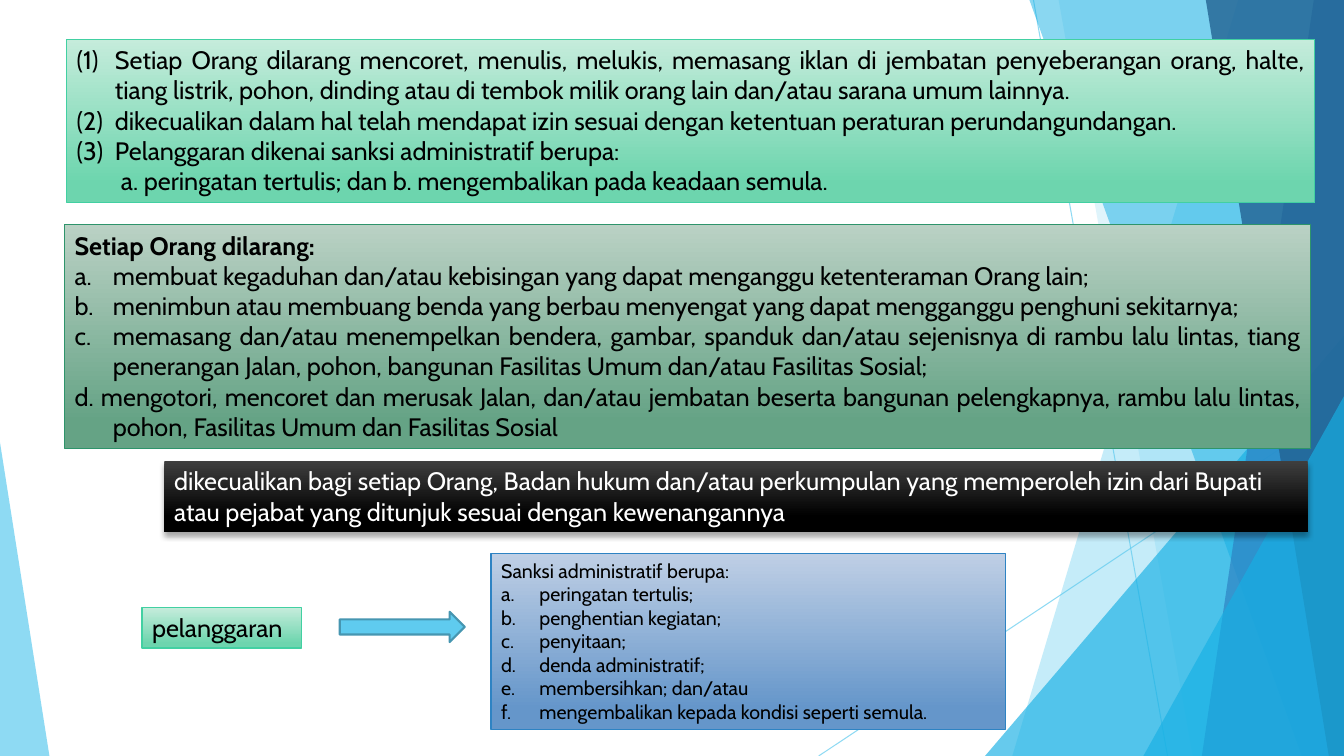
import pptx
import pptx.dml.color
import pptx.enum.shapes
import pptx.enum.text
import pptx.oxml
import pptx.oxml.ns
import pptx.util
import lxml.etree

WIDTH, HEIGHT = 13.33, 7.5
FONT = "Cabin"
HANG = 0.38
PARENTHESES, LETTERS = "arabicParenBoth", "alphaLcPeriod"
SHAPES = pptx.enum.shapes.MSO_SHAPE

# Background: start and end points
RAYS = [((10.25, 0), (11.58, HEIGHT)), ((WIDTH, 4.03), (8.12, HEIGHT))]
# Bands reach the right edge: top x, bottom x, colour, opacity in percent
BANDS_BACK = [(12.28, 10.04, "5FCBEF", 36), (10.5, 11.83, "5FCBEF", 20)]
BANDS_FRONT = [(10.21, 12.91, "17B0E4", 50), (13.03, 11.92, "2E83C3", 70),
               (11.96, 13.18, "226292", 80)]
# Triangles stand on the bottom edge: left, top, width, apex, colour, opacity
TRIANGLE_BACK = (9.77, 3.33, 3.56, 1, "17B0E4", 66)
TRIANGLES_FRONT = [(11.34, 3.93, 1.99, 1, "17B0E4", 66),
                   (0, 4.39, 0.49, 0, "5FCBEF", 70)]

# Gradients: first colour, last colour, where the last begins, line colour
MINT = ("C5ECDB", "6DD5AE", 88, "42D0A2")
GREEN = ("BAD1C4", "65A385", 88, "2E946B")
BLUE = ("BFCFE5", "6596CA", 88, "2E83C3")
BLACK = ("3F3F3F", "000000", 78, None)

# Lists: placeholder index, box, gradient, text format, paragraphs
# (text, paragraph format)
NUMBERED = {"bullet": PARENTHESES, "left": HANG, "first": -HANG}
LETTERED = {"bullet": LETTERS, "left": HANG, "first": -HANG}
LISTS = [
    (1, (0.66, 0.39, 12.38, 1.62), MINT, {"size": 18, "justify": True}, [
        ("Setiap Orang dilarang mencoret, menulis, melukis, memasang iklan di jembatan "
         "penyeberangan orang, halte, tiang listrik, pohon, dinding atau di tembok milik "
         "orang lain dan/atau sarana umum lainnya.", NUMBERED),
        ("dikecualikan dalam hal telah mendapat izin sesuai dengan ketentuan peraturan "
         "perundangundangan.", NUMBERED),
        ("Pelanggaran dikenai sanksi administratif berupa:", NUMBERED),
        ("a. peringatan tertulis; dan b. mengembalikan pada keadaan semula.",
         {"left": HANG, "first": 0.06}),
    ]),
    (2, (0.64, 2.23, 12.36, 2.22), GREEN, {"size": 18, "justify": True}, [
        ("Setiap Orang dilarang:", {"bold": True}),
        ("membuat kegaduhan dan/atau kebisingan yang dapat menganggu ketenteraman "
         "Orang lain;", LETTERED),
        ("menimbun atau membuang benda yang berbau menyengat yang dapat mengganggu "
         "penghuni sekitarnya;", LETTERED),
        ("memasang dan/atau menempelkan bendera, gambar, spanduk dan/atau sejenisnya di "
         "rambu lalu lintas, tiang penerangan Jalan, pohon, bangunan Fasilitas Umum "
         "dan/atau Fasilitas Sosial;", LETTERED),
        ("d. mengotori, mencoret dan merusak Jalan, dan/atau jembatan beserta bangunan "
         "pelengkapnya, rambu lalu lintas, pohon, Fasilitas Umum dan Fasilitas Sosial",
         {"left": HANG, "first": -HANG}),
    ]),
    (4, (4.87, 5.49, 5.1, 1.75), BLUE, {"size": 14}, [
        ("Sanksi administratif berupa:", {}),
        ("peringatan tertulis;", LETTERED),
        ("penghentian kegiatan;", LETTERED),
        ("penyitaan;", LETTERED),
        ("denda administratif;", LETTERED),
        ("membersihkan; dan/atau", LETTERED),
        ("mengembalikan kepada kondisi seperti semula.", LETTERED),
    ]),
]
EXCEPTION = ("dikecualikan bagi setiap Orang, Badan hukum dan/atau perkumpulan yang "
             "memperoleh izin dari Bupati atau pejabat yang ditunjuk sesuai dengan "
             "kewenangannya")
EXCEPTION_BOX = (1.63, 4.57, 11.34, 0.71)
VIOLATION, VIOLATION_BOX = "pelanggaran", (1.41, 6.03, 1.58, 0.4)
ARROW_BOX = (3.37, 6.07, 1.24, 0.3)


def inches(*lengths):
    return [pptx.util.Inches(length) for length in lengths]


def color(value):
    return pptx.dml.color.RGBColor.from_string(value)


def set_opacity(shape, percent):
    for element in shape.element.iter(pptx.oxml.ns.qn("a:srgbClr")):
        lxml.etree.SubElement(element, pptx.oxml.ns.qn("a:alpha")).set("val", str(percent * 1000))


def fill_plain(shape, value, opacity):
    shape.shadow.inherit = False
    shape.fill.solid()
    shape.fill.fore_color.rgb = color(value)
    shape.line.fill.background()
    set_opacity(shape, opacity)


def add_ray(slide, start, end):
    ray = slide.shapes.add_connector(
        pptx.enum.shapes.MSO_CONNECTOR.STRAIGHT, *inches(*start, *end))
    ray.line.color.rgb = color("5FCBEF")
    ray.line.width = pptx.util.Pt(0.75)
    properties = ray.element.find(pptx.oxml.ns.qn("p:spPr"))
    lxml.etree.SubElement(properties, pptx.oxml.ns.qn("a:effectLst"))
    set_opacity(ray, 70)


def add_band(slide, top_x, bottom_x, value, opacity):
    builder = slide.shapes.build_freeform(*inches(top_x, 0))
    corners = [(WIDTH, 0), (WIDTH, HEIGHT), (bottom_x, HEIGHT)]
    builder.add_line_segments([inches(*corner) for corner in corners], close=True)
    fill_plain(builder.convert_to_shape(), value, opacity)


def add_triangle(slide, left, top, width, apex, value, opacity):
    triangle = slide.shapes.add_shape(
        SHAPES.ISOSCELES_TRIANGLE, *inches(left, top, width, HEIGHT - top))
    triangle.adjustments[0] = apex
    fill_plain(triangle, value, opacity)


def fill_gradient(shape, first, last, position, line):
    shape.shadow.inherit = False
    shape.fill.gradient()
    shape.fill.gradient_angle = 270
    for stop, value, place in zip(shape.fill.gradient_stops, (first, last), (0, position / 100)):
        stop.color.rgb = color(value)
        stop.position = place
    if line:
        shape.line.color.rgb = color(line)
        shape.line.width = pptx.util.Pt(1)
    else:
        shape.line.fill.background()


def write(paragraph, text, size=18, value="000000", bold=False, justify=False,
          bullet=None, left=0, first=0):
    run = paragraph.add_run()
    run.text = text
    run.font.name = FONT
    run.font.size = pptx.util.Pt(size)
    run.font.bold = bold
    run.font.color.rgb = color(value)
    alignment = pptx.enum.text.PP_ALIGN
    paragraph.alignment = alignment.JUSTIFY if justify else alignment.LEFT
    paragraph.space_before = pptx.util.Pt(0)
    properties = paragraph._p.get_or_add_pPr()
    properties.set("marL", str(pptx.util.Inches(left)))
    properties.set("indent", str(pptx.util.Inches(first)))
    mark = lxml.etree.SubElement(
        properties, pptx.oxml.ns.qn("a:buAutoNum" if bullet else "a:buNone"))
    if bullet:
        mark.set("type", bullet)


def fill_box(shape, gradient, paragraphs, wrap=True, **text_format):
    fill_gradient(shape, *gradient)
    frame = shape.text_frame
    frame.word_wrap = wrap
    frame.auto_size = pptx.enum.text.MSO_AUTO_SIZE.NONE
    frame.vertical_anchor = pptx.enum.text.MSO_ANCHOR.TOP
    for index, (text, paragraph_format) in enumerate(paragraphs):
        paragraph = frame.add_paragraph() if index else frame.paragraphs[0]
        write(paragraph, text, **text_format, **paragraph_format)


def add_drop_shadow(shape):
    effects = shape.element.spPr.find(pptx.oxml.ns.qn("a:effectLst"))
    effects.append(pptx.oxml.parse_xml(
        f'<a:outerShdw {pptx.oxml.ns.nsdecls("a")} blurRad="{pptx.util.Pt(4)}" '
        f'dist="{pptx.util.Pt(3)}" dir="5400000" rotWithShape="0">'
        '<a:srgbClr val="000000"><a:alpha val="35000"/></a:srgbClr></a:outerShdw>'))


def main():
    presentation = pptx.Presentation()
    presentation.slide_width, presentation.slide_height = inches(WIDTH, HEIGHT)
    slide = presentation.slides.add_slide(presentation.slide_layouts.get_by_name("Comparison"))
    placeholders = {item.placeholder_format.idx: item for item in slide.placeholders}

    for ray in RAYS:
        add_ray(slide, *ray)
    for band in BANDS_BACK:
        add_band(slide, *band)
    add_triangle(slide, *TRIANGLE_BACK)
    for band in BANDS_FRONT:
        add_band(slide, *band)
    for triangle in TRIANGLES_FRONT:
        add_triangle(slide, *triangle)

    for index, box, gradient, text_format, paragraphs in LISTS:
        body = placeholders.pop(index)
        body.left, body.top, body.width, body.height = inches(*box)
        fill_box(body, gradient, paragraphs, **text_format)
        slide.shapes.element.append(body.element)  # in front of the background
    for unused in placeholders.values():
        slide.shapes.element.remove(unused.element)

    exception = slide.shapes.add_textbox(*inches(*EXCEPTION_BOX))
    fill_box(exception, BLACK, [(EXCEPTION, {})], value="FFFFFF")
    add_drop_shadow(exception)
    violation = slide.shapes.add_textbox(*inches(*VIOLATION_BOX))
    fill_box(violation, MINT, [(VIOLATION, {})], wrap=False)

    arrow = slide.shapes.add_shape(SHAPES.RIGHT_ARROW, *inches(*ARROW_BOX))
    fill_plain(arrow, "5FCBEF", 100)
    arrow.line.color.rgb = color("4696B1")
    arrow.line.width = pptx.util.Pt(1.5)
    presentation.save("out.pptx")


if __name__ == "__main__":
    main()
